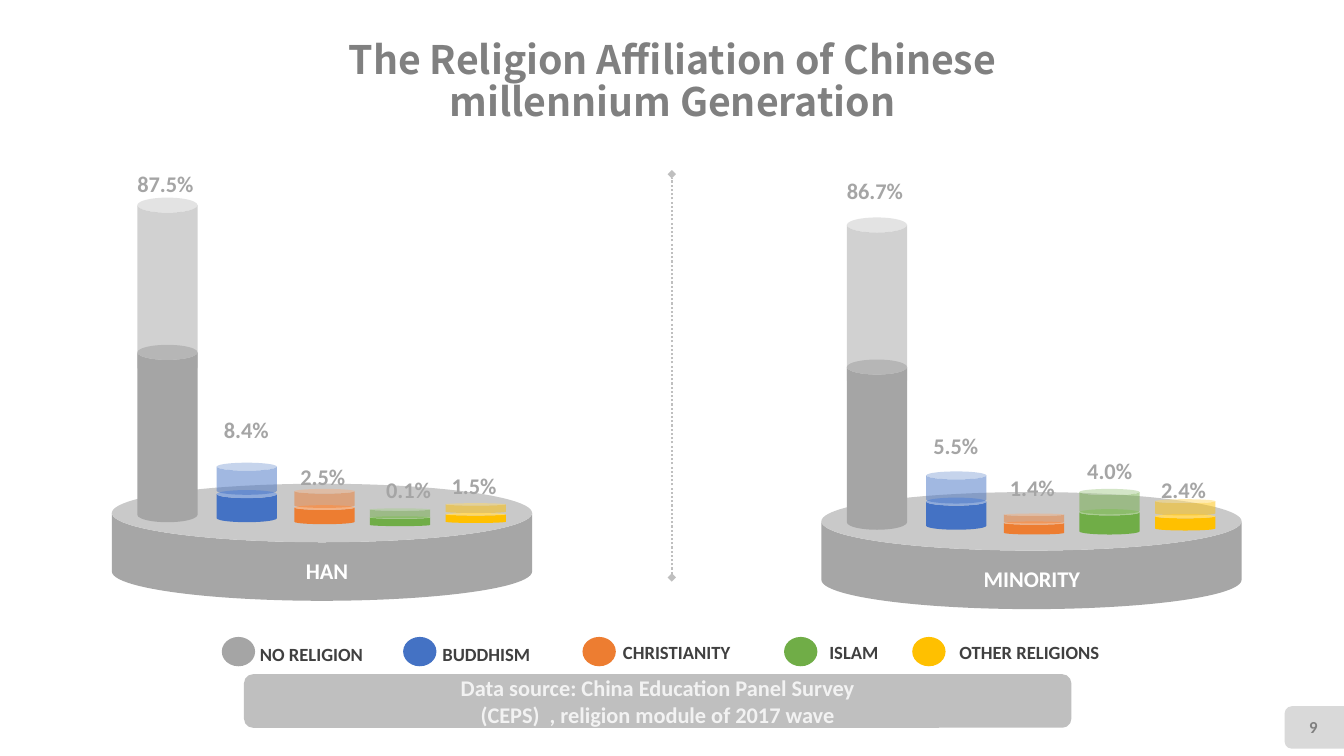
from lxml.etree import SubElement
from pptx import Presentation
from pptx.dml.color import RGBColor
from pptx.enum.dml import MSO_LINE
from pptx.enum.shapes import MSO_CONNECTOR, MSO_SHAPE
from pptx.enum.text import MSO_ANCHOR, MSO_AUTO_SIZE, PP_ALIGN
from pptx.oxml.ns import qn
from pptx.util import Cm, Pt

WHITE = RGBColor(0xFF, 0xFF, 0xFF)
OFF_WHITE = RGBColor(0xF2, 0xF2, 0xF2)
PALE = RGBColor(0xD9, 0xD9, 0xD9)
SILVER = RGBColor(0xBF, 0xBF, 0xBF)
BASE = RGBColor(0xA6, 0xA6, 0xA6)
GRAY = RGBColor(0xA5, 0xA5, 0xA5)
MID = RGBColor(0x80, 0x80, 0x80)
DARK = RGBColor(0x40, 0x40, 0x40)
BLUE = RGBColor(0x44, 0x72, 0xC4)
ORANGE = RGBColor(0xED, 0x7D, 0x31)
GREEN = RGBColor(0x70, 0xAD, 0x47)
GOLD = RGBColor(0xFF, 0xC0, 0x00)

# Content (all lengths in cm)
TITLE = "The Religion Affiliation of Chinese millennium Generation"
SOURCE = ["Data source: China Education Panel Survey",
          "(CEPS)  , religion module of 2017 wave"]
PAGE = "9"

# name, colour, bar offset on platform, legend dot x, legend text x, text y, text width
RELIGIONS = [
    ("NO RELIGION", GRAY, 0.64, 5.59, 6.55, 16.21, 3.4),
    ("BUDDHISM", BLUE, 2.64, 10.16, 11.15, 16.21, 3.4),
    ("CHRISTIANITY", ORANGE, 4.6, 14.68, 15.7, 16.15, 3.7),
    ("ISLAM", GREEN, 6.5, 19.76, 20.9, 16.15, 2),
    ("OTHER RELIGIONS", GOLD, 8.41, 22.99, 24.18, 16.15, 4.5),
]

# Bars: value, solid height, ghost height, ghost lift, foot below platform top,
# label shift, label y
PLATFORMS = [
    dict(name="HAN", x=2.82, y=12.19, name_dx=4.89, bars=[
        ("87.5%", 4.47, 4.47, 3.71, 0.97, 0, 4.29),
        ("8.4%", 0.81, 0.81, 0.69, 0.97, 0.18, 10.49),
        ("2.5%", 0.48, 0.48, 0.41, 1.02, 0.15, 11.66),
        ("0.1%", 0.25, 0.25, 0.2, 1.07, 0.41, 11.99),
        ("1.5%", 0.25, 0.25, 0.25, 0.99, 0.15, 11.89)]),
    dict(name="MINORITY", x=20.7, y=12.4, name_dx=4.09, bars=[
        ("86.7%", 4.29, 4.29, 3.58, 0.95, 0, 4.47),
        ("5.5%", 0.81, 0.81, 0.66, 0.95, 0.18, 10.9),
        ("1.4%", 0.33, 0.25, 0.2, 1.07, 0.15, 11.94),
        ("4.0%", 0.64, 0.64, 0.51, 1.07, 0.2, 11.51),
        ("2.4%", 0.41, 0.41, 0.38, 0.97, 0.15, 11.99)]),
]
BAR_W, PLATFORM_W, PLATFORM_H = 1.52, 10.59, 2.95


def write(tf, *lines, size=16, color=GRAY, font="Calibri", align=PP_ALIGN.LEFT,
          anchor=MSO_ANCHOR.TOP, wrap=True, spacing=None):
    tf.margin_left = tf.margin_right = tf.margin_top = tf.margin_bottom = 0
    tf.word_wrap, tf.auto_size, tf.vertical_anchor = wrap, MSO_AUTO_SIZE.NONE, anchor
    for i, text in enumerate(lines):
        p = tf.add_paragraph() if i else tf.paragraphs[0]
        p.alignment, p.line_spacing = align, spacing
        r = p.add_run()
        r.text = text
        r.font.name, r.font.size, r.font.bold = font, Pt(size), True
        r.font.color.rgb = color


def label(text, x, y, w, h=0.69, **fmt):
    write(s.shapes.add_textbox(Cm(x), Cm(y), Cm(w), Cm(h)).text_frame, text, **fmt)


def shape(kind, x, y, w, h, color, alpha=None):
    sp = s.shapes.add_shape(kind, Cm(x), Cm(y), Cm(w), Cm(h))
    sp.shadow.inherit = False
    sp.fill.solid()
    sp.fill.fore_color.rgb = color
    sp.line.fill.background()
    if alpha:
        clr = sp._element.spPr.find(qn("a:solidFill")).find(qn("a:srgbClr"))
        SubElement(clr, qn("a:alpha"), val=str(alpha * 1000))
    return sp


prs = Presentation()
prs.slide_width, prs.slide_height = Cm(33.87), Cm(19.05)
s = prs.slides.add_slide(prs.slide_layouts[5])

# Title
title = s.shapes.title
title.left, title.top, title.width, title.height = Cm(6.5), Cm(1.42), Cm(20.88), Cm(1.32)
write(title.text_frame, TITLE, size=28, color=MID, font="Noto Sans CJK SC",
      align=PP_ALIGN.CENTER, anchor=MSO_ANCHOR.MIDDLE, spacing=0.9)

# Page number tab
tab = shape(MSO_SHAPE.ROUND_2_SAME_RECTANGLE, 32.59, 17.58, 1.07, 1.5, PALE)
tab.rotation = 270
label(PAGE, 32.39, 17.81, 1.42, 1.02, size=12, color=MID,
      align=PP_ALIGN.CENTER, anchor=MSO_ANCHOR.MIDDLE)

# Platforms with their cylinders and value labels
for g in PLATFORMS:
    base = shape(MSO_SHAPE.CAN, g["x"], g["y"], PLATFORM_W, PLATFORM_H, BASE)
    base.adjustments[0] = 0.5
    label(g["name"], g["x"] + g["name_dx"], g["y"] + 1.85, 3.2, color=WHITE)
    for (_, color, dx, *_), (_, h, ghost_h, lift, foot, _, _) in zip(RELIGIONS, g["bars"]):
        x, top = g["x"] + dx, g["y"] + foot - h
        shape(MSO_SHAPE.CAN, x, top, BAR_W, h, color)
        shape(MSO_SHAPE.CAN, x, top - lift, BAR_W, ghost_h, color, alpha=50)
    for (_, _, dx, *_), (value, *_, shift, y) in zip(RELIGIONS, g["bars"]):
        label(value, g["x"] + dx + shift, y, 1.57, wrap=False)

# Divider
divider = s.shapes.add_connector(MSO_CONNECTOR.STRAIGHT, Cm(16.93), Cm(14.55), Cm(16.93), Cm(4.39))
divider.line.color.rgb = SILVER
divider.line.width = Pt(1.5)
divider.line.dash_style = MSO_LINE.ROUND_DOT
for end in ("a:headEnd", "a:tailEnd"):
    SubElement(divider.line._get_or_add_ln(), qn(end), type="diamond")
SubElement(divider._element.spPr, qn("a:effectLst"))

# Legend
for name, color, _, dot_x, text_x, text_y, text_w in RELIGIONS:
    shape(MSO_SHAPE.OVAL, dot_x, 16.05, 0.84, 0.74, color)
    label(name, text_x, text_y, text_w, 0.56, size=13.3, color=DARK, wrap=False)

# Data source bar
bar = shape(MSO_SHAPE.ROUNDED_RECTANGLE, 6.15, 16.99, 20.85, 1.35, SILVER)
write(bar.text_frame, *SOURCE, color=OFF_WHITE, align=PP_ALIGN.CENTER, anchor=MSO_ANCHOR.MIDDLE)

prs.save("out.pptx")
